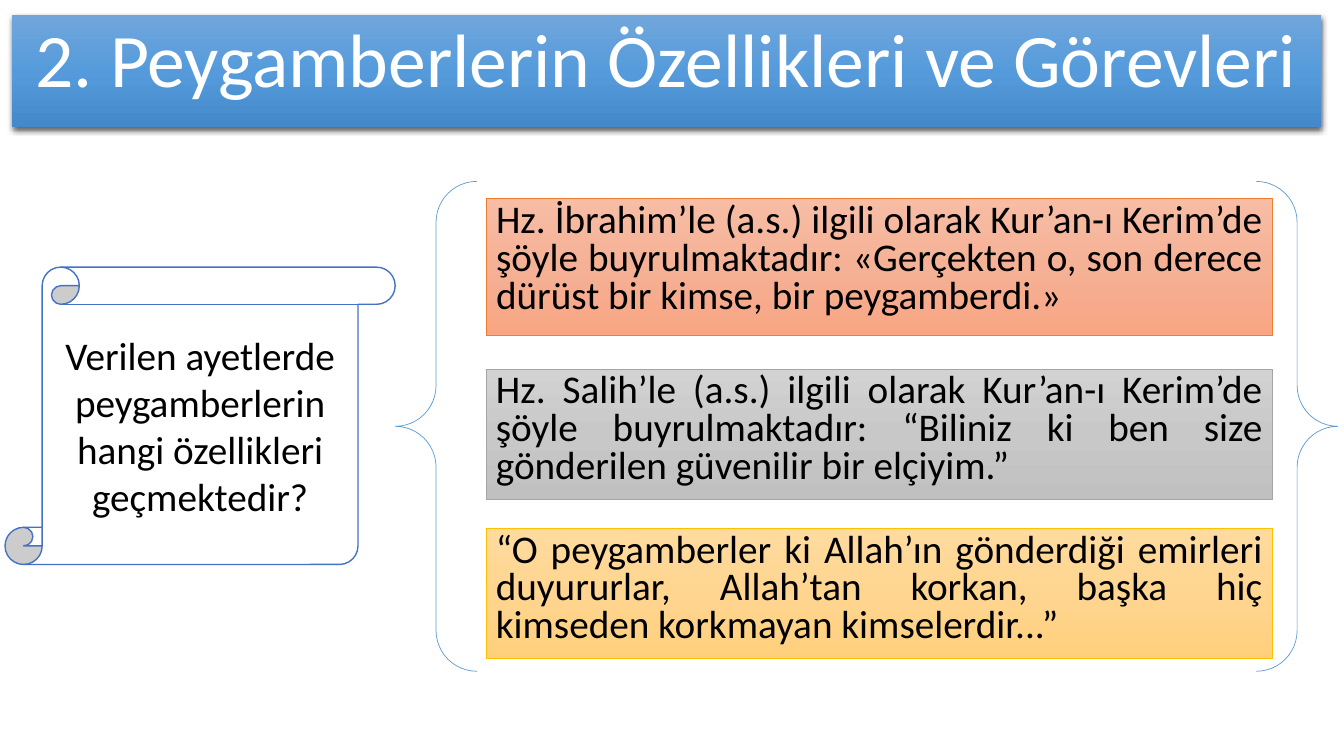
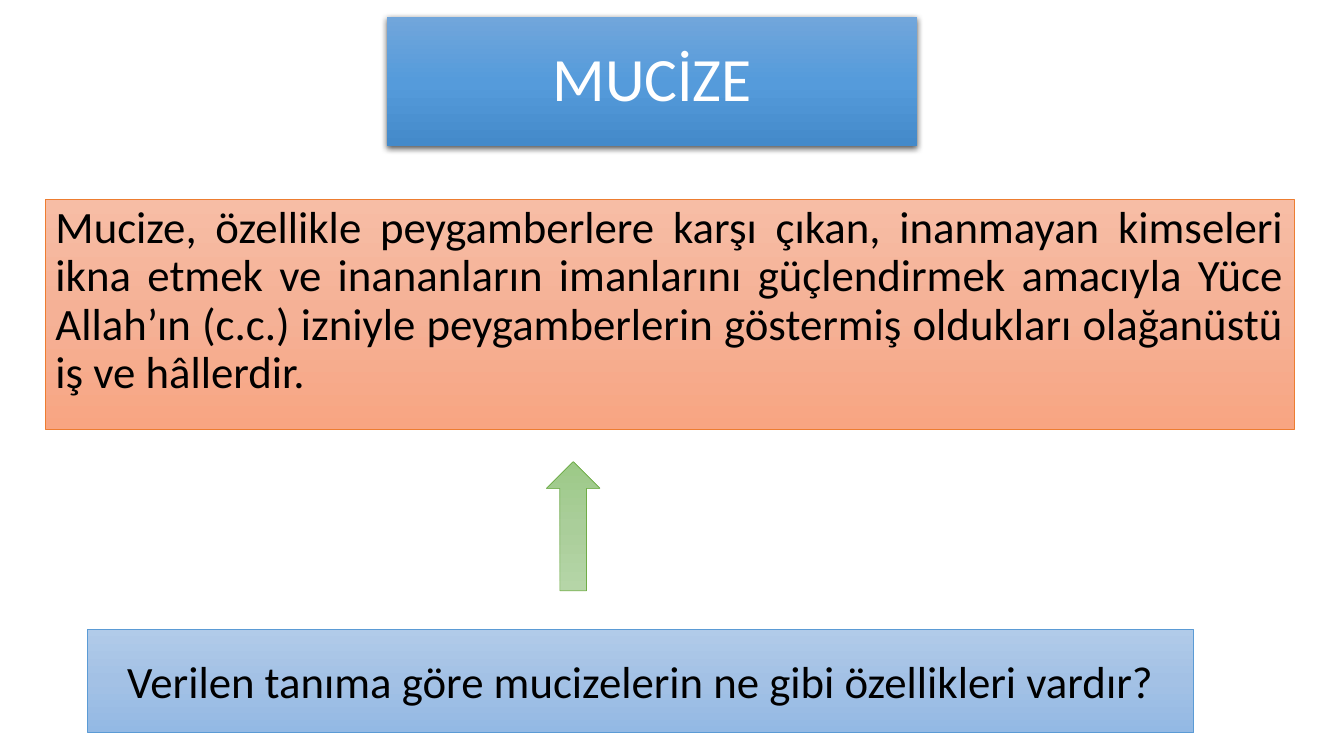
"""Build two slides on the qualities of prophets and on miracles."""
from copy import deepcopy

from lxml import etree
from pptx import Presentation
from pptx.dml.color import RGBColor
from pptx.enum.shapes import MSO_SHAPE
from pptx.enum.text import MSO_ANCHOR, MSO_AUTO_SIZE, PP_ALIGN
from pptx.oxml.ns import qn
from pptx.util import Inches, Pt

RECT, SCROLL = MSO_SHAPE.RECTANGLE, MSO_SHAPE.VERTICAL_SCROLL
BRACES, ARROW = MSO_SHAPE.DOUBLE_BRACE, MSO_SHAPE.DOWN_ARROW
TOP, MIDDLE = MSO_ANCHOR.TOP, MSO_ANCHOR.MIDDLE
CENTER, JUSTIFY = PP_ALIGN.CENTER, PP_ALIGN.JUSTIFY
NO_FIT = MSO_AUTO_SIZE.NONE

FONT, BLACK, WHITE = "Calibri", "000000", "FFFFFF"
BLUE, BLUE_LINE = ["71A6DB", "559BDB", "448ACA"], "5B9BD5"
PALE_BLUE = ["B1CBE9", "A3C1E5", "93B9E4"]
ORANGE, ORANGE_LINE = ["F7BDA5", "F5B196", "F8A582"], "ED7D31"
GRAY, GRAY_LINE = ["D2D2D2", "C8C8C8", "C0C0C0"], "A5A5A5"
GOLD, GOLD_LINE = ["FFDB9E", "FFD590", "FFD07C"], "FFC000"
GREEN, GREEN_LINE = ["B5D5A7", "AACE9A", "9CC987"], "70AD47"


def style(s, box, fill=None, line=None, width=0.5, shadow=False):
    """Place a shape and set its fill, line and shadow."""
    s.left, s.top, s.width, s.height = [Inches(v) for v in box]
    if isinstance(fill, list):
        s.fill.gradient()
        s.fill.gradient_angle = 270
        stops = s._element.spPr.find(".//" + qn("a:gsLst"))
        stops.insert(1, deepcopy(stops[0]))
        for i, stop in enumerate(s.fill.gradient_stops):
            stop.position = i / 2
            stop.color.rgb = RGBColor.from_string(fill[i])
    elif fill:
        s.fill.solid()
        s.fill.fore_color.rgb = RGBColor.from_string(fill)
    else:
        s.fill.background()
    if line:
        s.line.color.rgb = RGBColor.from_string(line)
        s.line.width = Pt(width)
    else:
        s.line.fill.background()
    s.shadow.inherit = False
    if shadow:
        effects = s._element.spPr.find(qn("a:effectLst"))
        outer = etree.SubElement(effects, qn("a:outerShdw"), blurRad=str(Pt(4.5)),
                                 dist=str(Pt(1.5)), dir="5400000", algn="ctr", rotWithShape="0")
        color = etree.SubElement(outer, qn("a:srgbClr"), val=BLACK)
        etree.SubElement(color, qn("a:alpha"), val="63000")


def write(s, text, size=28, color=BLACK, align=CENTER, anchor=MIDDLE,
          spacing=1.0, before=0, bottom=0.05):
    """Write one unbulleted paragraph into a shape."""
    tf = s.text_frame
    tf.word_wrap, tf.auto_size, tf.vertical_anchor = True, NO_FIT, anchor
    tf.margin_bottom = Inches(bottom)
    p = tf.paragraphs[0]
    p.alignment, p.line_spacing, p.space_before = align, spacing, Pt(before)
    pPr = p._p.get_or_add_pPr()
    pPr.set("marL", "0")
    pPr.set("indent", "0")
    etree.SubElement(pPr, qn("a:buNone"))
    r = p.add_run()
    r.text = text
    r.font.name, r.font.size = FONT, Pt(size)
    r.font.color.rgb = RGBColor.from_string(color)


prs = Presentation()
prs.slide_width, prs.slide_height = Inches(13.33), Inches(7.5)

slides = []
for title, box, size, bottom in [
    ("2. Peygamberlerin Özellikleri ve Görevleri", (0.12, 0.15, 12.98, 1.11), 54, 0.21),
    ("MUCİZE", (3.84, 0.17, 5.26, 1.28), 44, 0.05),
]:
    slide = prs.slides.add_slide(prs.slide_layouts[1])
    s = slide.shapes.title
    style(s, box, BLUE, shadow=True)
    write(s, title, size=size, color=WHITE, spacing=0.9, bottom=bottom)
    slides.append(slide)
traits, miracle = slides

verses = [
    ("Hz. İbrahim’le (a.s.) ilgili olarak Kur’an-ı Kerim’de şöyle buyrulmaktadır: "
     "«Gerçekten o, son derece dürüst bir kimse, bir peygamberdi.»",
     1.97, 1.36, ORANGE, ORANGE_LINE),
    ("Hz. Salih’le (a.s.) ilgili olarak Kur’an-ı Kerim’de şöyle buyrulmaktadır: "
     "“Biliniz ki ben size gönderilen güvenilir bir elçiyim.”",
     3.66, 1.29, GRAY, GRAY_LINE),
    ("“O peygamberler ki Allah’ın gönderdiği emirleri duyururlar, Allah’tan korkan, "
     "başka hiç kimseden korkmayan kimselerdir...”",
     5.24, 1.29, GOLD, GOLD_LINE),
]
for i, (text, top, height, fill, line) in enumerate(verses):
    box = (4.82, top, 7.8, height)
    if i == 0:
        s = traits.placeholders[1]
    else:
        s = traits.shapes.add_shape(RECT, *[Inches(v) for v in box])
    style(s, box, fill, line)
    write(s, text, align=JUSTIFY, anchor=TOP, spacing=0.8, before=10)

box = (0.05, 2.65, 3.87, 2.95)
s = traits.shapes.add_shape(SCROLL, *[Inches(v) for v in box])
style(s, box, WHITE, "4472C4", width=1)
write(s, "Verilen ayetlerde peygamberlerin hangi özellikleri geçmektedir?")

box = (3.92, 1.8, 9.35, 4.86)
s = traits.shapes.add_shape(BRACES, *[Inches(v) for v in box])
style(s, box, line=BLUE_LINE)

s = miracle.placeholders[1]
style(s, (0.45, 1.98, 12.39, 2.28), ORANGE, ORANGE_LINE)
write(s, "Mucize, özellikle peygamberlere karşı çıkan, inanmayan kimseleri ikna etmek ve "
      "inananların imanlarını güçlendirmek amacıyla Yüce Allah’ın (c.c.) izniyle "
      "peygamberlerin göstermiş oldukları olağanüstü iş ve hâllerdir.",
      size=32, align=JUSTIFY, anchor=TOP, spacing=0.9, before=10)

box = (0.87, 6.24, 10.97, 1.03)
s = miracle.shapes.add_shape(RECT, *[Inches(v) for v in box])
style(s, box, PALE_BLUE, BLUE_LINE)
write(s, "Verilen tanıma göre mucizelerin ne gibi özellikleri vardır?", size=32)

box = (5.42, 4.58, 0.53, 1.28)
s = miracle.shapes.add_shape(ARROW, *[Inches(v) for v in box])
style(s, box, GREEN, GREEN_LINE)
s.rotation = 180

prs.save("out.pptx")
